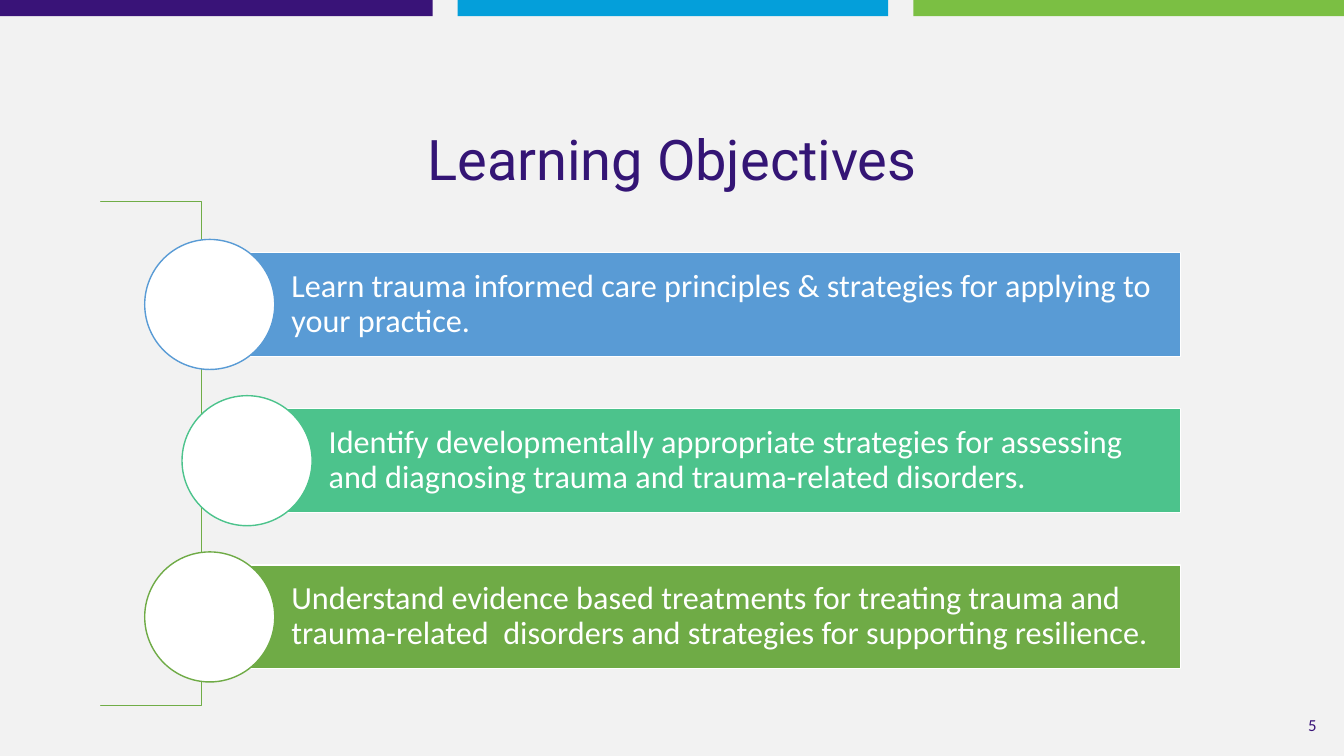
import pptx
import pptx.dml.color
import pptx.enum.shapes
import pptx.enum.text
import pptx.util

Inches = pptx.util.Inches
Pt = pptx.util.Pt
SHAPES = pptx.enum.shapes.MSO_SHAPE
ALIGN = pptx.enum.text.PP_ALIGN


def paint(target, color):
    if hasattr(target, "solid"):
        target.solid()
        target = target.fore_color
    target.rgb = pptx.dml.color.RGBColor.from_string(color)


def write(shape, text, size, font, color, align, inset, spacing=1.0, wrap=True):
    frame = shape.text_frame
    frame.word_wrap = wrap
    frame.auto_size = pptx.enum.text.MSO_AUTO_SIZE.NONE
    frame.vertical_anchor = pptx.enum.text.MSO_ANCHOR.MIDDLE
    frame.margin_left = frame.margin_right = Inches(inset)
    frame.margin_top = frame.margin_bottom = Inches(inset)
    paragraph = frame.paragraphs[0]
    paragraph.alignment = align
    paragraph.line_spacing = spacing
    run = paragraph.add_run()
    run.text = text
    run.font.size = Pt(size)
    run.font.name = font
    paint(run.font.color, color)


presentation = pptx.Presentation()
presentation.slide_width = Inches(13.33)
presentation.slide_height = Inches(7.5)
slide = presentation.slides.add_slide(presentation.slide_layouts[5])
paint(slide.background.fill, "F2F2F2")

stripes = [(0, 4.29, "391378"), (4.54, 4.27, "049FDA"), (9.06, 4.27, "7BBF43")]
for left, width, color in stripes:
    stripe = slide.shapes.add_shape(
        SHAPES.RECTANGLE, Inches(left), 0, Inches(width), Inches(0.16))
    stripe.shadow.inherit = False
    paint(stripe.fill, color)
    stripe.line.fill.background()

number = slide.shapes.add_textbox(
    Inches(12.91), Inches(7.06), Inches(0.2), Inches(0.27))
write(number, "5", 12, "Calibri", "391378", ALIGN.RIGHT, 0.05, wrap=False)

title = slide.shapes.title
title.left, title.top = 0, Inches(1.22)
title.width, title.height = presentation.slide_width, Inches(0.78)
write(title, "Learning Objectives", 40, "Roboto", "341575", ALIGN.CENTER, 0.05, 0.9)

curves = [
    [(1.46, 2.12), (2.81, 3.47), (2.81, 5.66), (1.46, 7.02)],
    [(1.44, 7.0), (2.79, 5.66), (2.79, 3.48), (1.44, 2.14)],
]
STEPS = 40
arc_points = []
for curve in curves:
    for step in range(STEPS + 1):
        t = step / STEPS
        weights = [(1 - t) ** 3, 3 * t * (1 - t) ** 2, 3 * t ** 2 * (1 - t), t ** 3]
        arc_points.append(tuple(
            sum(weight * point[axis] for weight, point in zip(weights, curve))
            for axis in (0, 1)))
builder = slide.shapes.build_freeform(*arc_points[0], scale=Inches(1))
builder.add_line_segments(arc_points[1:], close=True)
arc = builder.convert_to_shape()
arc.shadow.inherit = False
arc.fill.background()
paint(arc.line.fill, "70AD47")
arc.line.width = Pt(1)

objectives = [
    (2.08, "599BD5", "Learn trauma informed care principles & strategies for "
     "applying to your practice."),
    (2.45, "4CC38C", "Identify developmentally appropriate strategies for "
     "assessing and diagnosing trauma and trauma-related disorders."),
    (2.08, "6FAB46", "Understand evidence based treatments for treating trauma "
     "and trauma-related  disorders and strategies for supporting resilience."),
]
RIGHT = 11.71
FIRST_MIDDLE = 3.02
PITCH = 1.55
BAR_HEIGHT = 1.03
TEXT_HEIGHT = 0.8
TEXT_INDENT = 0.75
DIAMETER = 1.29

for row, (center, color, text) in enumerate(objectives):
    middle = FIRST_MIDDLE + row * PITCH
    bar = slide.shapes.add_shape(
        SHAPES.RECTANGLE, Inches(center), Inches(middle - BAR_HEIGHT / 2),
        Inches(RIGHT - center), Inches(BAR_HEIGHT))
    text_left = center + TEXT_INDENT
    label = slide.shapes.add_textbox(
        Inches(text_left), Inches(middle - TEXT_HEIGHT / 2),
        Inches(RIGHT - text_left), Inches(TEXT_HEIGHT))
    write(label, text, 23, "Calibri", "FFFFFF", ALIGN.LEFT, 0.06, 0.9)
    circle = slide.shapes.add_shape(
        SHAPES.OVAL, Inches(center - DIAMETER / 2), Inches(middle - DIAMETER / 2),
        Inches(DIAMETER), Inches(DIAMETER))
    for shape, fill, line in [(bar, color, "FFFFFF"), (circle, "FFFFFF", color)]:
        shape.shadow.inherit = False
        paint(shape.fill, fill)
        paint(shape.line.fill, line)
        shape.line.width = Pt(1)

presentation.save("out.pptx")
